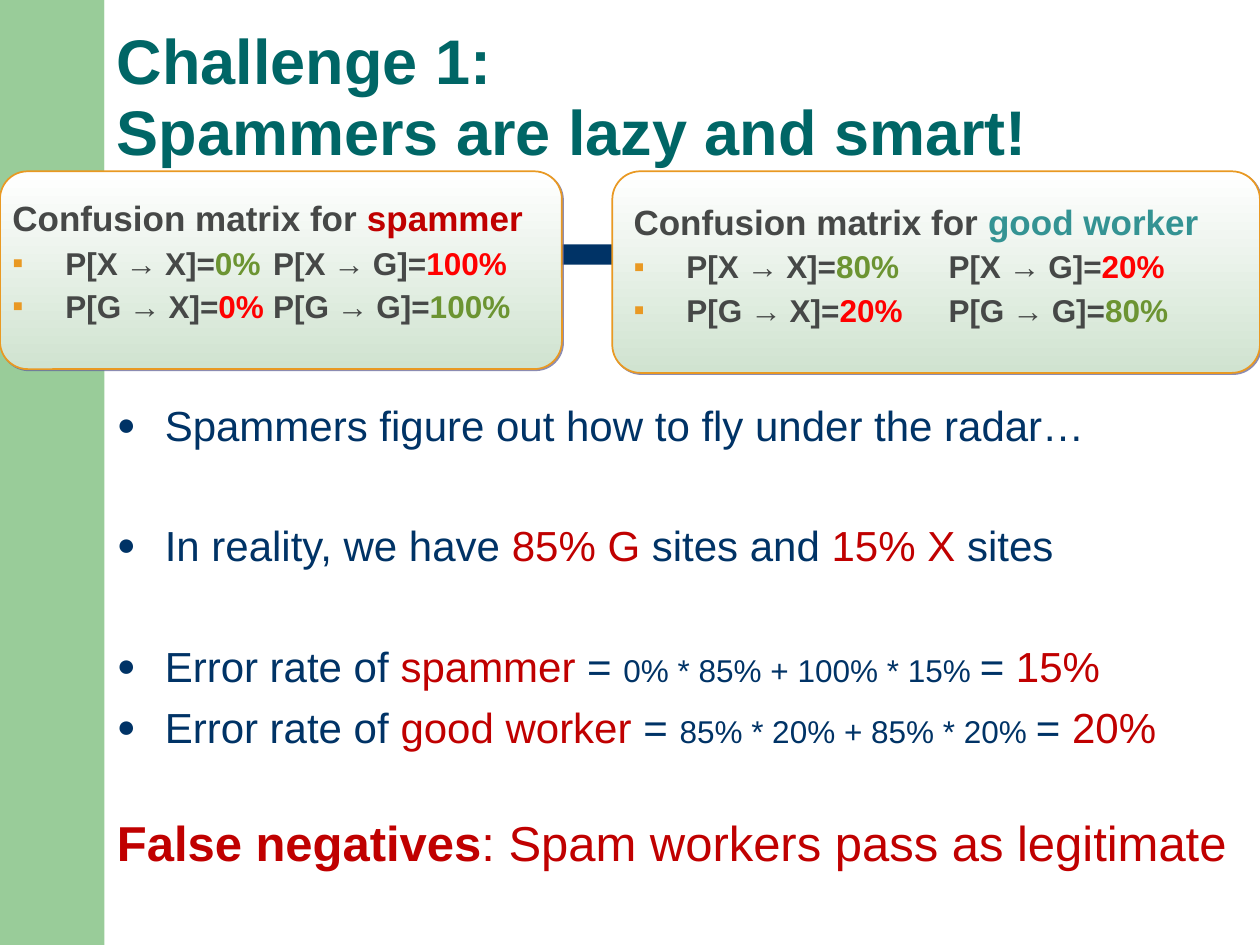
from lxml import etree
from pptx import Presentation
from pptx.dml.color import RGBColor
from pptx.enum.shapes import MSO_SHAPE
from pptx.oxml import parse_xml
from pptx.oxml.ns import qn
from pptx.util import Inches, Pt

RECTANGLE = MSO_SHAPE.RECTANGLE
ROUNDED = MSO_SHAPE.ROUNDED_RECTANGLE
WHITE = RGBColor(0xFF, 0xFF, 0xFF)
SIDE_GREEN = RGBColor(0x99, 0xCC, 0x99)
PALE_GREEN = RGBColor(0xD0, 0xE3, 0xD0)
NAVY = RGBColor(0x00, 0x33, 0x66)
TEAL = RGBColor(0x00, 0x66, 0x66)
LIGHT_TEAL = RGBColor(0x34, 0x93, 0x93)
ORANGE = RGBColor(0xE9, 0x99, 0x23)
GRAY = RGBColor(0x46, 0x48, 0x47)
DARK_RED = RGBColor(0xC0, 0x00, 0x00)
RED = RGBColor(0xFF, 0x00, 0x00)
GREEN = RGBColor(0x6C, 0x94, 0x32)
SHADOW = (
    '<a:outerShdw xmlns:a="http://schemas.openxmlformats.org/drawingml/2006/main" '
    'blurRad="0" dist="12700" dir="2700000" algn="ctr" rotWithShape="0">'
    '<a:srgbClr val="666699"><a:alpha val="75000"/></a:srgbClr></a:outerShdw>'
)


def add_text(paragraph, text, size=24, color=NAVY, bold=False):
    for index, part in enumerate(text.split(" → ")):
        pieces = [(" → ", "Times New Roman")] if index else []
        for piece, font_name in pieces + [(part, "Arial")]:
            run = paragraph.add_run()
            run.text = piece
            run.font.name = font_name
            run.font.size = Pt(size)
            run.font.bold = bold
            run.font.color.rgb = color


def set_layout(paragraph, indent, before, bullet=None, color=NAVY, percent=100):
    paragraph.space_before = Pt(before)
    properties = paragraph._p.get_or_add_pPr()
    properties.set("marL", str(Inches(indent)))
    properties.set("indent", str(-Inches(indent)))
    if bullet:
        bullet_color = etree.SubElement(properties, qn("a:buClr"))
        etree.SubElement(bullet_color, qn("a:srgbClr"), val=str(color))
        etree.SubElement(properties, qn("a:buSzPct"), val=str(percent * 1000))
        etree.SubElement(properties, qn("a:buFont"), typeface="Arial")
        etree.SubElement(properties, qn("a:buChar"), char=bullet)


presentation = Presentation()
presentation.slide_width = Inches(10)
presentation.slide_height = Inches(7.5)
slide = presentation.slides.add_slide(presentation.slide_layouts[6])

for left, top, width, height, color in [
    (0, 0, 0.83, 7.5, SIDE_GREEN),
    (0.67, 1.75, 7.67, 0.35, NAVY),
    (0.83, 0, 9.17, 1.94, WHITE),
]:
    shape = slide.shapes.add_shape(
        RECTANGLE, Inches(left), Inches(top), Inches(width), Inches(height))
    shape.shadow.inherit = False
    shape.fill.solid()
    shape.fill.fore_color.rgb = color
    shape.line.fill.background()

title = slide.shapes.add_textbox(Inches(0.83), Inches(0.17), Inches(9.17), Inches(1.77))
title.text_frame.word_wrap = True
paragraph = title.text_frame.paragraphs[0]
paragraph.line_spacing = 0.94
add_text(paragraph, "Challenge 1:", size=36, color=TEAL, bold=True)
paragraph.add_line_break()
add_text(paragraph, "Spammers are lazy and smart!", size=36, color=TEAL, bold=True)

cards = [
    (4.86, 5.14, 1.6, 4.93, 1.54, 5.07, "good worker", LIGHT_TEAL, "\t",
     [("80%", GREEN, "20%", RED), ("20%", RED, "80%", GREEN)]),
    (0, 4.46, 1.57, 0, 1.51, 5.53, "spammer", DARK_RED, "\t ",
     [("0%", GREEN, "100%", RED), ("0%", RED, "100%", GREEN)]),
]
for (left, width, height, text_left, text_top, text_width,
     worker, worker_color, gap, rates) in cards:
    card = slide.shapes.add_shape(
        ROUNDED, Inches(left), Inches(1.36), Inches(width), Inches(height))
    card.adjustments[0] = 0.14
    card.fill.gradient()
    card.fill.gradient_angle = 270
    for stop, color, position in zip(card.fill.gradient_stops, (WHITE, PALE_GREEN), (0, 1)):
        stop.color.rgb = color
        stop.position = position
    card.line.color.rgb = ORANGE
    card.line.width = Pt(1)
    card.shadow.inherit = False
    card._element.spPr.find(qn("a:effectLst")).append(parse_xml(SHADOW))

    matrix = slide.shapes.add_textbox(
        Inches(text_left), Inches(text_top), Inches(text_width), Inches(1.13))
    matrix.text_frame.word_wrap = True
    paragraph = matrix.text_frame.paragraphs[0]
    set_layout(paragraph, 0.42, 3)
    add_text(paragraph, "Confusion matrix for ", size=20, color=GRAY, bold=True)
    add_text(paragraph, worker, size=20, color=worker_color, bold=True)
    for label, (rate_x, color_x, rate_g, color_g) in zip("XG", rates):
        paragraph = matrix.text_frame.add_paragraph()
        set_layout(paragraph, 0.42, 3, bullet="▪", color=ORANGE)
        for text, color in [
            (f"P[{label} → X]=", GRAY), (rate_x, color_x),
            (f"{gap}P[{label} → G]=", GRAY), (rate_g, color_g),
        ]:
            add_text(paragraph, text, size=18, color=color, bold=True)

body = slide.shapes.add_textbox(Inches(0.83), Inches(3.12), Inches(9.17), Inches(4.38))
frame = body.text_frame
frame.word_wrap = True
red = {"color": DARK_RED}
small = {"size": 18}
points = [
    (2, [("Spammers figure out how to fly under the radar…", {})]),
    (40, [("In reality, we have ", {}), ("85% G", red), (" sites and ", {}),
          ("15% X ", red), ("sites", {})]),
    (40, [("Error rate of ", {}), ("spammer", red), (" = ", {}),
          ("0% * 85% + 100% * 15% ", small), ("= ", {}), ("15%", red)]),
    (6, [("Error rate of ", {}), ("good worker ", red), ("= ", {}),
         ("85% * 20% + 85% * 20% ", small), ("= ", {}), ("20%", red)]),
]
for index, (before, runs) in enumerate(points):
    paragraph = frame.add_paragraph() if index else frame.paragraphs[0]
    set_layout(paragraph, 0.38, before, bullet="●", percent=75)
    for text, text_format in runs:
        add_text(paragraph, text, **text_format)

paragraph = frame.add_paragraph()
set_layout(paragraph, 0.38, 35)
add_text(paragraph, "False negatives", size=28, color=DARK_RED, bold=True)
add_text(paragraph, ": Spam workers pass as legitimate", size=28, color=DARK_RED)

presentation.save("out.pptx")
